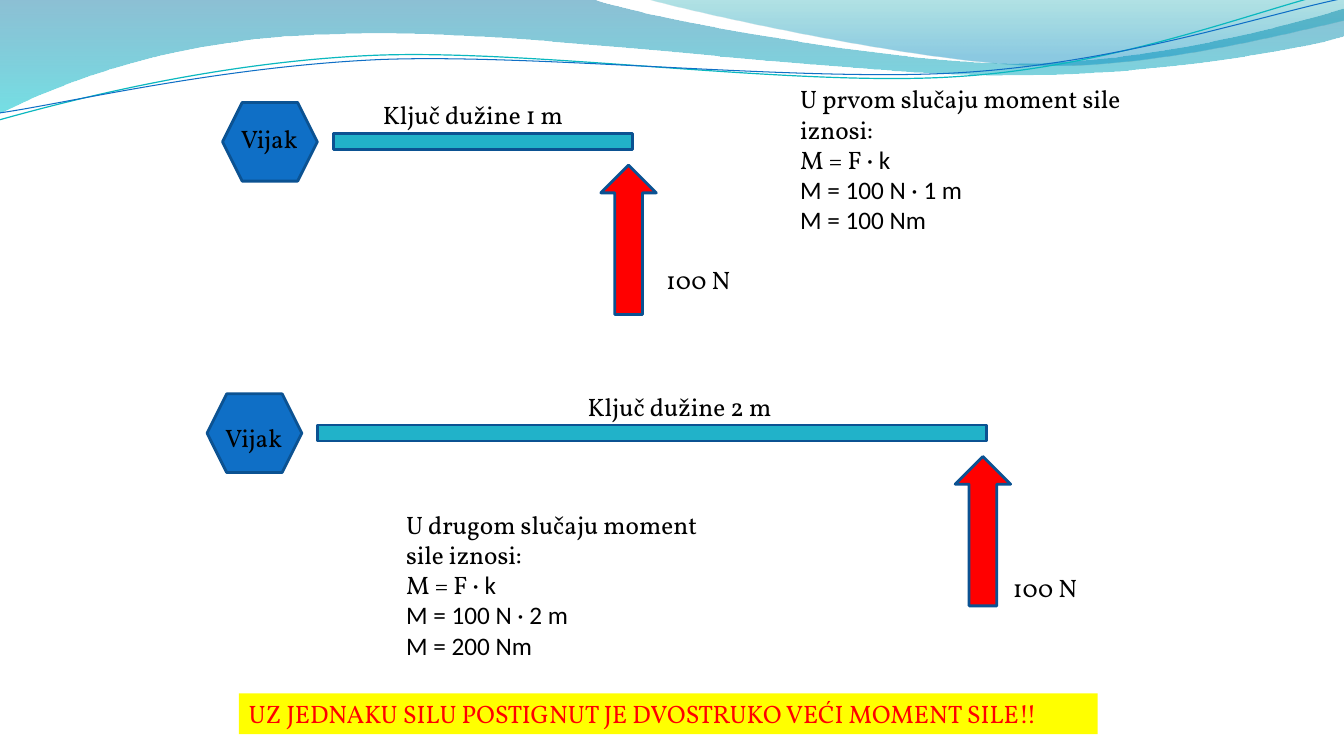
from lxml import etree
from pptx import Presentation
from pptx.dml.color import RGBColor
from pptx.enum.shapes import MSO_SHAPE
from pptx.enum.text import MSO_AUTO_SIZE
from pptx.oxml.ns import qn
from pptx.util import Pt

HEXAGON = MSO_SHAPE.HEXAGON
RECTANGLE = MSO_SHAPE.RECTANGLE
UP_ARROW = MSO_SHAPE.UP_ARROW
GROW = MSO_AUTO_SIZE.SHAPE_TO_FIT_TEXT


def color(value):
    return RGBColor.from_string(value)


def add_text(left, top, width, paragraphs, font_color="000000"):
    box = page.shapes.add_textbox(Pt(left), Pt(top), Pt(width), Pt(7.2 + 21.9 * len(paragraphs)))
    frame = box.text_frame
    frame.word_wrap = True
    frame.auto_size = GROW
    for index, runs in enumerate(paragraphs):
        para = frame.paragraphs[0] if index == 0 else frame.add_paragraph()
        for text, font in runs:
            span = para.add_run()
            span.text = text
            span.font.name = font
            span.font.size = Pt(18)
            span.font.color.rgb = color(font_color)
    return box


deck = Presentation()
deck.slide_width = Pt(960)
deck.slide_height = Pt(540)
page = deck.slides.add_slide(deck.slide_layouts[6])

waves = [
    {"start": (0, 0),
     "segments": [(422.6, -0.7), (456.5, 12.2, 637.2, 45.4, 727.9, 45.4),
                  (819.4, 45.4, 920.2, 18.7, 959.8, 6.5), (961.2, 25.9),
                  (943.9, 31.7, 835.2, 54.7, 715.7, 54), (596.9, 54, 366.5, 20.2, 247, 24.5),
                  (123.8, 25.9, 43.9, 59.8, -0.7, 81.4)],
     "stops": [(0, "0074A1", 45), (1, "00C6CF", 55)]},
    {"start": (460.1, -0.7),
     "segments": [(488.9, 7.9, 654.5, 44.6, 738, 46.8), (821.5, 49.7, 923, 23, 959.8, 15.1),
                  (959.8, 0)],
     "stops": [(0, "00A1A9", 30), (0.8, "008BBF", 45)]},
    {"start": (-0.7, 85.7),
     "segments": [(46.1, 72.7, 151.9, 44.6, 265.7, 39.6), (379.4, 34.6, 568.8, 62.6, 684, 54.7),
                  (799.2, 47.5, 901.4, 5.8, 958.3, -7.2)],
     "line": ("0AB8BF", 0.85)},
    {"start": (0, 80.6),
     "segments": [(45.4, 74.2, 157, 47.5, 272.2, 42.5), (386.6, 38.2, 573.1, 59, 687.6, 51.8),
                  (802.8, 44.6, 903.6, 10.1, 960.5, -1.4)],
     "line": ("0F6FC6", 0.75)},
]
for wave in waves:
    start_x, start_y = wave["start"]
    builder = page.shapes.build_freeform(Pt(start_x), Pt(start_y))
    for segment in wave["segments"]:
        points = [(Pt(x), Pt(y)) for x, y in zip(segment[::2], segment[1::2])]
        builder.add_line_segments(points, close=False)
    if "stops" in wave:
        builder.add_line_segments([], close=True)
    shape = builder.convert_to_shape()
    shape.shadow.inherit = False

    pieces = iter(shape.element.spPr.findall(".//" + qn("a:lnTo")))
    for segment in wave["segments"]:
        first = next(pieces)
        if len(segment) == 6:
            curve = etree.Element(qn("a:cubicBezTo"))
            first.addprevious(curve)
            for piece in (first, next(pieces), next(pieces)):
                curve.append(piece[0])
                piece.getparent().remove(piece)

    if "stops" in wave:
        shape.line.fill.background()
        shape.fill.gradient()
        shape.fill.gradient_angle = 270
        for stop, (position, value, opacity) in zip(shape.fill.gradient_stops, wave["stops"]):
            stop.position = position
            stop.color.rgb = color(value)
        tones = shape.element.spPr.findall(".//" + qn("a:srgbClr"))
        for tone, (position, value, opacity) in zip(tones, wave["stops"]):
            etree.SubElement(tone, qn("a:alpha")).set("val", str(opacity * 1000))
    else:
        shape.fill.background()
        shape.line.color.rgb = color(wave["line"][0])
        shape.line.width = Pt(wave["line"][1])

cases = [
    {"left": 159, "top": 73.2, "wrench": 213.8, "screw_top": 84.2, "label": (266.4, 174.2),
     "force": (468.7, 185.5), "result": (564.5, 56.2), "order": "prvom", "length": 1},
    {"left": 147.9, "top": 281.3, "wrench": 478, "screw_top": 298.1, "label": (412.6, 236.2),
     "force": (716.4, 405.4), "result": (283, 360), "order": "drugom", "length": 2},
]
for case in cases:
    left, top, wrench, length = case["left"], case["top"], case["wrench"], case["length"]
    parts = [
        (HEXAGON, left, top, 67.7, 56.2, "0F6FC6"),
        (RECTANGLE, left + 79, top + 22.3, wrench, 11.5, "21B2C9"),
        (UP_ARROW, left + 56.4 + wrench, top + 44.8, 39.6, 106.7, "FF0000"),
    ]
    for kind, x, y, width, height, fill in parts:
        shape = page.shapes.add_shape(kind, Pt(x), Pt(y), Pt(width), Pt(height))
        shape.shadow.inherit = False
        shape.fill.solid()
        shape.fill.fore_color.rgb = color(fill)
        shape.line.color.rgb = color("0B5292")
        shape.line.width = Pt(2)

    label_left, label_width = case["label"]
    add_text(left + 5.9, case["screw_top"], 101.5, [[("Vijak", "Vollkorn")]])
    add_text(label_left, top - 5.7, label_width, [[(f"Ključ dužine {length} m", "Vollkorn")]])
    add_text(*case["force"], 95.8, [[("100 N", "Vollkorn")]])
    add_text(*case["result"], 247.7, [
        [(f"U {case['order']} slučaju moment sile iznosi:", "Vollkorn")],
        [("M = F ", "Vollkorn"), ("· k", "Calibri")],
        [(f"M = 100 N · {length} m", "Calibri")],
        [(f"M = {100 * length} Nm", "Calibri")],
    ])

conclusion = add_text(170.6, 495.2, 613.4, [
    [("UZ JEDNAKU SILU POSTIGNUT JE DVOSTRUKO VEĆI MOMENT SILE!!", "Vollkorn")],
], "FF0000")
conclusion.fill.solid()
conclusion.fill.fore_color.rgb = color("FFFF00")

deck.save("out.pptx")
